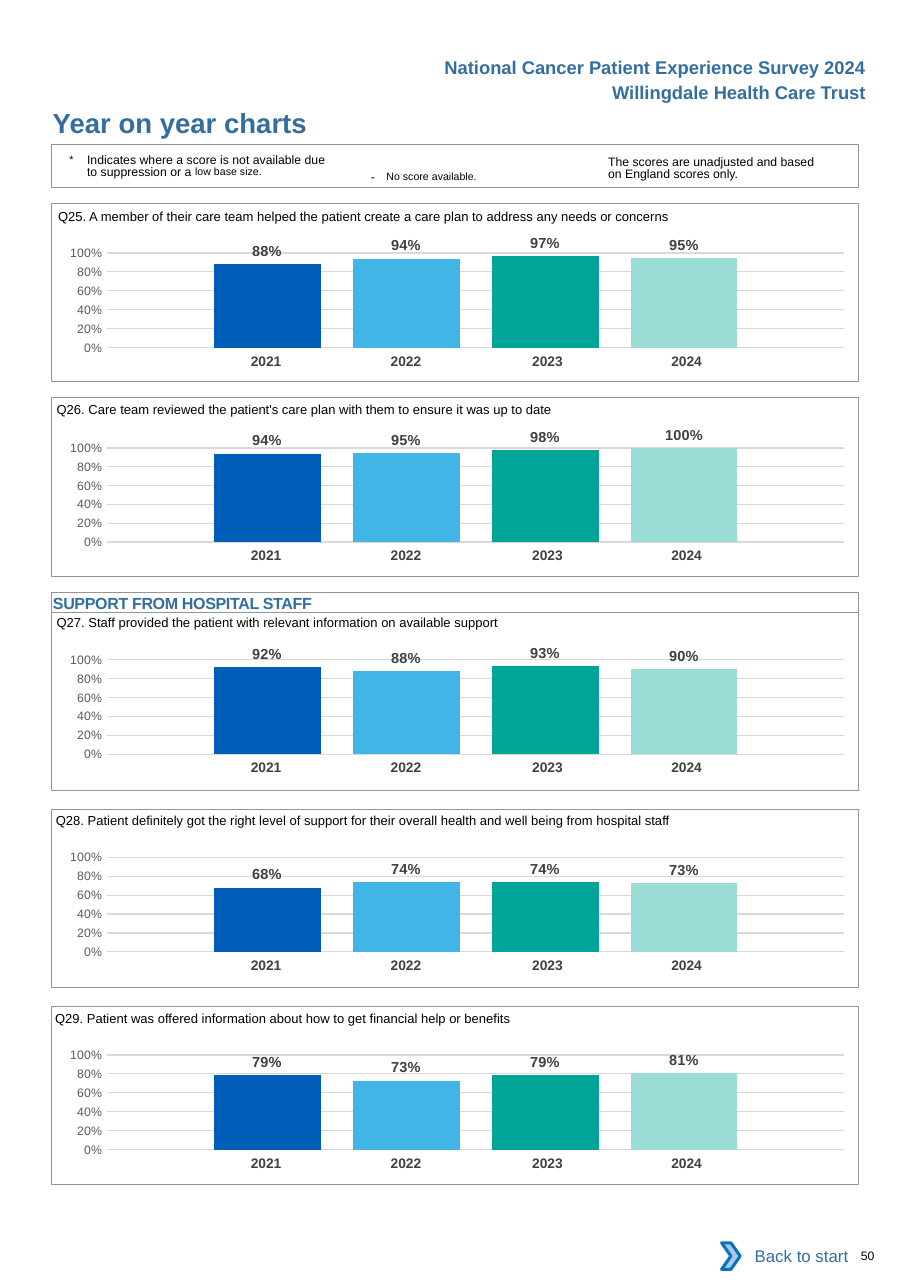
from lxml.etree import fromstring
from pptx import Presentation
from pptx.chart.data import CategoryChartData
from pptx.dml.color import RGBColor
from pptx.enum.chart import XL_CHART_TYPE, XL_LABEL_POSITION, XL_TICK_MARK
from pptx.enum.shapes import MSO_SHAPE
from pptx.enum.text import MSO_ANCHOR, PP_ALIGN
from pptx.util import Pt

HUES = {"blue": "336E9F", "black": "000000", "white": "FFFFFF", "rule": "939598",
        "year": "414042", "label": "404040", "tick": "595959", "grid": "D9D9D9",
        "arrow": "A8C7E9", "edge": "0A74BB"}
BARS = {"2021": "005EB8", "2022": "41B6E6", "2023": "00A499", "2024": "9CDCD7"}
BARE = "{2D5ABB26-0587-4C30-8999-92F81FD0307C}"  # table style: no fill, no grid
LAYOUT = """<c:layout xmlns:c="http://schemas.openxmlformats.org/drawingml/2006/chart">
<c:manualLayout><c:layoutTarget val="inner"/><c:xMode val="edge"/><c:yMode val="edge"/>
<c:x val="0.079"/><c:y val="0.145"/><c:w val="0.915"/><c:h val="0.666"/>
</c:manualLayout></c:layout>"""
LEFT, WIDE, HIGH = 33.9, 527, 116.6

# question left, question top, frame top, chart top, question, scores
PANELS = [
    (38, 129.6, 132.8, 151.9,
     "Q25. A member of their care team helped the patient create a care plan "
     "to address any needs or concerns", (0.88, 0.94, 0.97, 0.95)),
    (37, 255.6, 260, 278.8,
     "Q26. Care team reviewed the patient's care plan with them to ensure it was "
     "up to date", (0.94, 0.95, 0.98, 1)),
    (37, 395.3, 400.2, 417.6,
     "Q27. Staff provided the patient with relevant information on available support",
     (0.92, 0.88, 0.93, 0.9)),
    (36.5, 524.2, 529, 546.8,
     "Q28. Patient definitely got the right level of support for their overall health "
     "and well being from hospital staff", (0.68, 0.74, 0.74, 0.73)),
    (36, 653.8, 657.6, 676,
     "Q29. Patient was offered information about how to get financial help or benefits",
     (0.79, 0.73, 0.79, 0.81)),
]


def apply(item, **vals):
    """Set each named attribute on the item."""
    for key, val in vals.items():
        setattr(item, key, val)


def hue(name):
    return RGBColor.from_string(HUES.get(name, name))


class Page:
    def __init__(self, wide, high):
        self.deck = Presentation()
        apply(self.deck, slide_width=Pt(wide), slide_height=Pt(high))
        self.shapes = self.deck.slides.add_slide(self.deck.slide_layouts[6]).shapes

    def font(self, font, size, color="black", bold=False):
        apply(font, name="Arial", size=Pt(size), bold=bold)
        font.color.rgb = hue(color)

    def label(self, shape, runs, pad=(0, 0, 0, 0), align=PP_ALIGN.LEFT,
              anchor=MSO_ANCHOR.TOP, line=None, hang=0):
        """Fill a shape with runs of (text, font values, extra run attributes)."""
        frame = shape.text_frame
        sides = ("margin_left", "margin_top", "margin_right", "margin_bottom")
        apply(frame, word_wrap=True, vertical_anchor=anchor,
              **{side: Pt(gap) for side, gap in zip(sides, pad)})
        para = frame.paragraphs[0]
        apply(para, alignment=align, line_spacing=Pt(line) if line else None)
        if hang:
            props = para._p.get_or_add_pPr()
            props.set("marL", str(Pt(hang)))
            props.set("indent", str(-Pt(hang)))
        for text, look, extra in runs:
            run = para.add_run()
            run.text = text
            self.font(run.font, **look)
            for key, val in extra.items():
                run._r.get_or_add_rPr().set(key, val)

    def text(self, box, runs, **opts):
        self.label(self.shapes.add_textbox(*map(Pt, box)), runs, **opts)

    def shape(self, box, kind=MSO_SHAPE.RECTANGLE, fill=None, line=None, weight=0.5):
        item = self.shapes.add_shape(kind, *map(Pt, box))
        item.shadow.inherit = False
        if fill:
            item.fill.solid()
            item.fill.fore_color.rgb = hue(fill)
        else:
            item.fill.background()
        if line:
            item.line.color.rgb = hue(line)
            item.line.width = Pt(weight)
        else:
            item.line.fill.background()
        return item

    def chart(self, box, scores):
        data = CategoryChartData(number_format="0%")
        data.categories = ["1"]
        for num, score in enumerate(scores, 1):
            data.add_series(f"Series {num}", [score])
        chart = self.shapes.add_chart(
            XL_CHART_TYPE.COLUMN_CLUSTERED, *map(Pt, box), data).chart
        apply(chart, has_legend=False, has_title=False)
        apply(chart.font, name="Calibri", size=Pt(10))
        chart.font.color.rgb = hue("black")
        chart.category_axis.visible = False
        axis = chart.value_axis
        apply(axis, minimum_scale=0, maximum_scale=1, major_unit=0.2,
              major_tick_mark=XL_TICK_MARK.NONE, minor_tick_mark=XL_TICK_MARK.NONE,
              has_major_gridlines=True)
        apply(axis.tick_labels, number_format="0%", number_format_is_linked=False)
        self.font(axis.tick_labels.font, 8, "tick")
        axis.format.line.fill.background()
        grid = axis.major_gridlines.format.line
        grid.color.rgb = hue("grid")
        grid.width = Pt(0.75)
        plot = chart.plots[0]
        apply(plot, gap_width=200, overlap=-30, vary_by_categories=False)
        for bar, color in zip(plot.series, BARS.values()):
            bar.format.fill.solid()
            bar.format.fill.fore_color.rgb = hue(color)
            labels = bar.data_labels
            apply(labels, show_value=True, position=XL_LABEL_POSITION.OUTSIDE_END,
                  number_format="0%", number_format_is_linked=False)
            self.font(labels.font, 9.5, "label", True)
        area = chart._chartSpace.chart.plotArea
        for old in area.findall("{*}layout"):
            area.remove(old)
        area.insert(0, fromstring(LAYOUT))

    def years(self, top):
        """Add the row of year names under a chart."""
        cols = (91.4, 91.4, 96.5, 91.4)
        table = self.shapes.add_table(
            1, len(cols), Pt(124.6), Pt(top), Pt(sum(cols)), Pt(19.5)).table
        apply(table, first_row=False, horz_banding=False)
        table._tbl.tblPr.find("{*}tableStyleId").text = BARE
        table.rows[0].height = Pt(19.5)
        for num, (year, wide, right) in enumerate(zip(BARS, cols, (0, 0, 3, 9))):
            table.columns[num].width = Pt(wide)
            cell = table.cell(0, num)
            cell.fill.background()
            apply(cell, margin_left=Pt(7.2), margin_right=Pt(right),
                  margin_top=Pt(3.6), margin_bottom=Pt(3.6))
            para = cell.text_frame.paragraphs[0]
            para.alignment = PP_ALIGN.CENTER
            run = para.add_run()
            run.text = year
            self.font(run.font, 9, "year", True)

    def panel(self, left, head, top, plot, ask, scores):
        self.chart((28.1, plot, WIDE, 92.9), scores)
        self.years(plot + 75.7)
        self.shape((LEFT, top, WIDE, HIGH), line="rule")
        self.text((left, head, 490, 17.3), [(ask, {"size": 8.5}, {})], pad=(0, 6.5, 0, 0))


def main():
    page = Page(594.72, 841.68)
    bold = {"size": 12, "color": "blue", "bold": True}
    small, note = {"size": 8}, {"size": 12}
    inset = (7.2, 3.6, 7.2, 3.6)

    for top, head in ((33.1, "National Cancer Patient Experience Survey 2024"),
                      (49.3, "Willingdale Health Care Trust")):
        page.text((253, top, 320, 21.6), [(head, bold, {})],
                  pad=inset, align=PP_ALIGN.RIGHT)
    page.text((34.5, 69.1, 324, 21.6),
              [("Year on year charts", {**bold, "size": 18}, {})])

    page.shape((LEFT, 94.3, WIDE, 28.1), line="rule", weight=0.75)
    page.text((45.4, 99.4, 171, 20), [
        ("*\t", note, {"baseline": "3000"}),
        ("Indicates where a score is not available due to suppression or a ", small, {}),
        ("low base size.", note, {"baseline": "7000"}),
    ], pad=(0, 2.2, 0, 0), line=8.1, hang=11.5)
    page.text((235.4, 103, 131.8, 17.3), [
        ("- ", small, {"spc": "260"}),
        ("No score available.", note, {"baseline": "3000"}),
    ], pad=inset)
    page.text((397.4, 100, 143, 19.4),
              [("The scores are unadjusted and based on England scores only.", small, {})],
              pad=(0, 2.2, 0, 0), line=8.1)

    for panel in PANELS:
        page.panel(*panel)
    band = page.shape((LEFT, 387.4, WIDE, 12.8), line="rule")
    page.label(band, [("SUPPORT FROM HOSPITAL STAFF", {**bold, "size": 10.5},
                       {"spc": "-20"})], pad=(0.7, 0.7, 0, 0))

    back = page.shape((476.6, 805.7, 85, 30.2), fill="white")
    page.label(back, [("Back to start", {"size": 11, "color": "blue"}, {})], pad=inset,
               align=PP_ALIGN.RIGHT, anchor=MSO_ANCHOR.MIDDLE)
    page.shape((471.6, 812.2, 12.2, 17.3), MSO_SHAPE.CHEVRON, "arrow", "edge", 2)
    page.text((562.6, 815.8, 28, 9.4), [("50", small, {})])
    page.deck.save("out.pptx")


if __name__ == "__main__":
    main()
